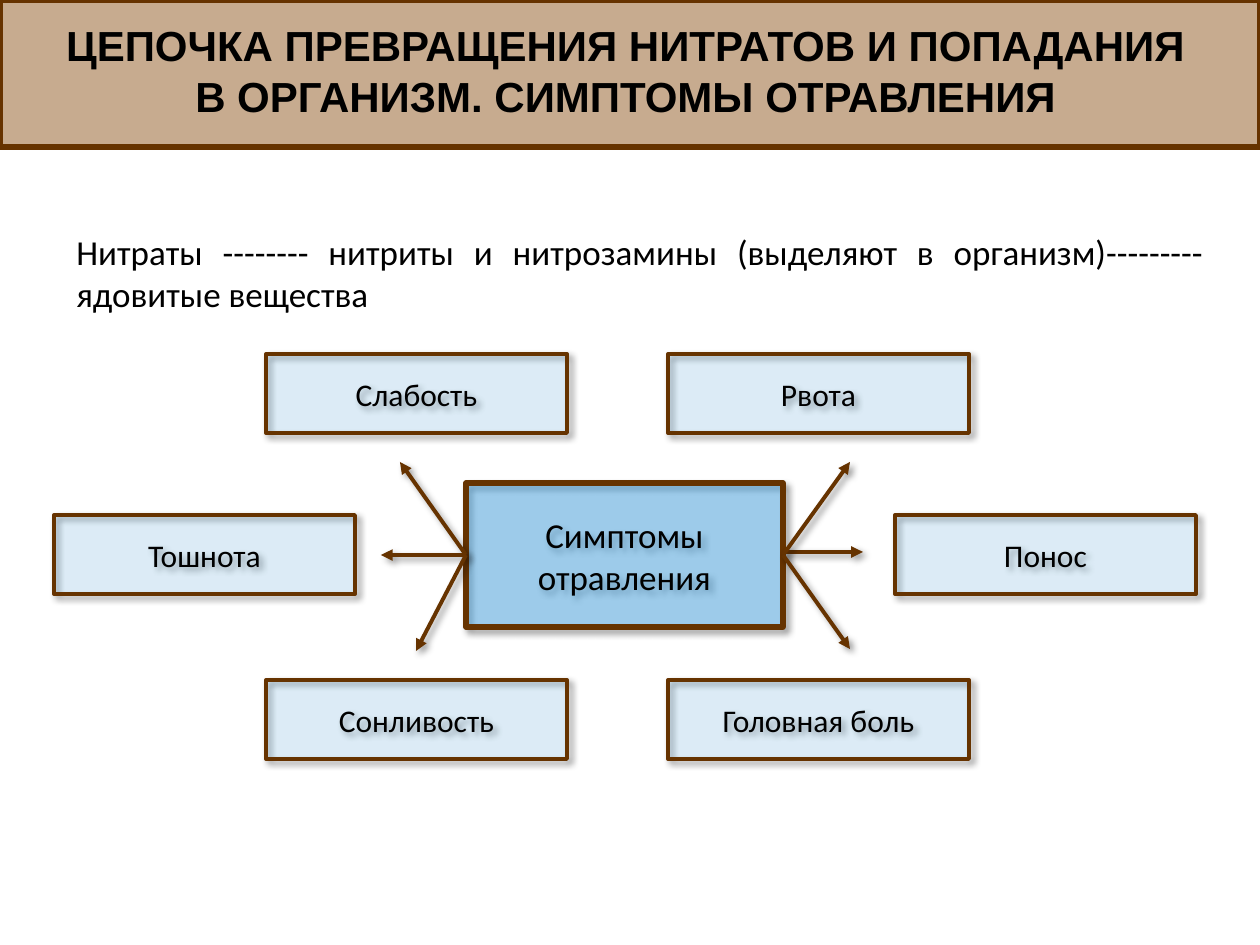
from lxml.etree import SubElement
from pptx import Presentation
from pptx.dml.color import RGBColor
from pptx.enum.shapes import MSO_CONNECTOR as CONNECTOR, MSO_SHAPE as SHAPE
from pptx.enum.text import MSO_ANCHOR as ANCHOR, PP_ALIGN as ALIGN
from pptx.oxml import parse_xml
from pptx.oxml.ns import nsdecls, qn
from pptx.util import Emu, Pt

PX = 914400 / 126
BROWN, BLUE, BLACK = "663300", "0099FF", "000000"
SHADOW = f"""<a:effectLst {nsdecls('a')}>
<a:outerShdw blurRad="50800" dist="38100" dir="2700000" algn="tl" rotWithShape="0">
<a:srgbClr val="000000"><a:alpha val="40000"/></a:srgbClr></a:outerShdw></a:effectLst>"""


def paint(target, color, alpha=100):
    target.solid()
    target.fore_color.rgb = RGBColor.from_string(color)
    if alpha < 100:
        tone = target.fore_color._xFill.find(qn("a:srgbClr"))
        SubElement(tone, qn("a:alpha"), val=str(alpha * 1000))


def write(shape, text, size, font="Calibri", bold=False, align=ALIGN.CENTER, anchor=ANCHOR.MIDDLE):
    frame = shape.text_frame
    frame.word_wrap = True
    frame.vertical_anchor = anchor
    paragraph = frame.paragraphs[0]
    paragraph.alignment = align
    run = paragraph.add_run()
    run.text = text
    for key, value in {"size": Pt(size), "name": font, "bold": bold}.items():
        setattr(run.font, key, value)
    paint(run.font.fill, BLACK)
    return paragraph


prs = Presentation()
prs.slide_width, prs.slide_height = Emu(round(1260 * PX)), Emu(round(945 * PX))
shapes = prs.slides.add_slide(prs.slide_layouts[6]).shapes

chain = shapes.add_textbox(*[Emu(round(v * PX)) for v in (64, 224, 1152, 110)])
chain_line = write(
    chain,
    "Нитраты -------- нитриты и нитрозамины (выделяют в организм)---------ядовитые вещества",
    20, align=ALIGN.JUSTIFY, anchor=ANCHOR.TOP,
)
chain_line.space_before = Pt(4)

left, right, top, middle, bottom = 466, 783, 354, 515, 680
symptoms = [
    ("Слабость", 266, top),
    ("Тошнота", 54, middle),
    ("Сонливость", 266, bottom),
    ("Головная боль", 668, bottom),
    ("Понос", 895, middle),
    ("Рвота", 668, top),
]
boxes = [
    ("", 0, 0, 1260, 147, "996633", 55, 3, 0),
    ("Симптомы отравления", left, 483, right - left, 144, BLUE, 30, 3, 20),
]
boxes += [(name, x, y, 301, 79, BLUE, 10, 2.25, 18) for name, x, y in symptoms]

drawn = []
for text, x, y, width, height, color, alpha, weight, size in boxes:
    box = shapes.add_shape(SHAPE.RECTANGLE, *[Emu(round(v * PX)) for v in (x, y, width, height)])
    paint(box.fill, color, alpha)
    paint(box.line.fill, BROWN)
    box.line.width = Pt(weight)
    if text:
        write(box, text, size)
        box._element.spPr.append(parse_xml(SHADOW))
    else:
        box.shadow.inherit = False
    drawn.append(box)
center = drawn[1]

title = shapes.add_textbox(*[Emu(round(v * PX)) for v in (35, 24, 1181, 92)])
write(title, "ЦЕПОЧКА ПРЕВРАЩЕНИЯ НИТРАТОВ И ПОПАДАНИЯ В ОРГАНИЗМ. СИМПТОМЫ ОТРАВЛЕНИЯ",
      24, font="Arial", bold=True)

arrows = [
    (left, 555, 400, 462, 1),
    (left, 555, 381, 555, 1),
    (left, 555, 416, 651, 1),
    (right, 552, 863, 552, None),
    (right, 555, 850, 462, 3),
    (right, 555, 850, 649, 3),
]
for *ends, side in arrows:
    arrow = shapes.add_connector(CONNECTOR.STRAIGHT, *[Emu(round(v * PX)) for v in ends])
    if side is not None:
        arrow.begin_connect(center, side)
    paint(arrow.line.fill, BROWN)
    arrow.line.width = Pt(2.25)
    SubElement(arrow.line._get_or_add_ln(), qn("a:tailEnd"), type="triangle")
    arrow._element.spPr.append(parse_xml(SHADOW))

prs.save("out.pptx")
